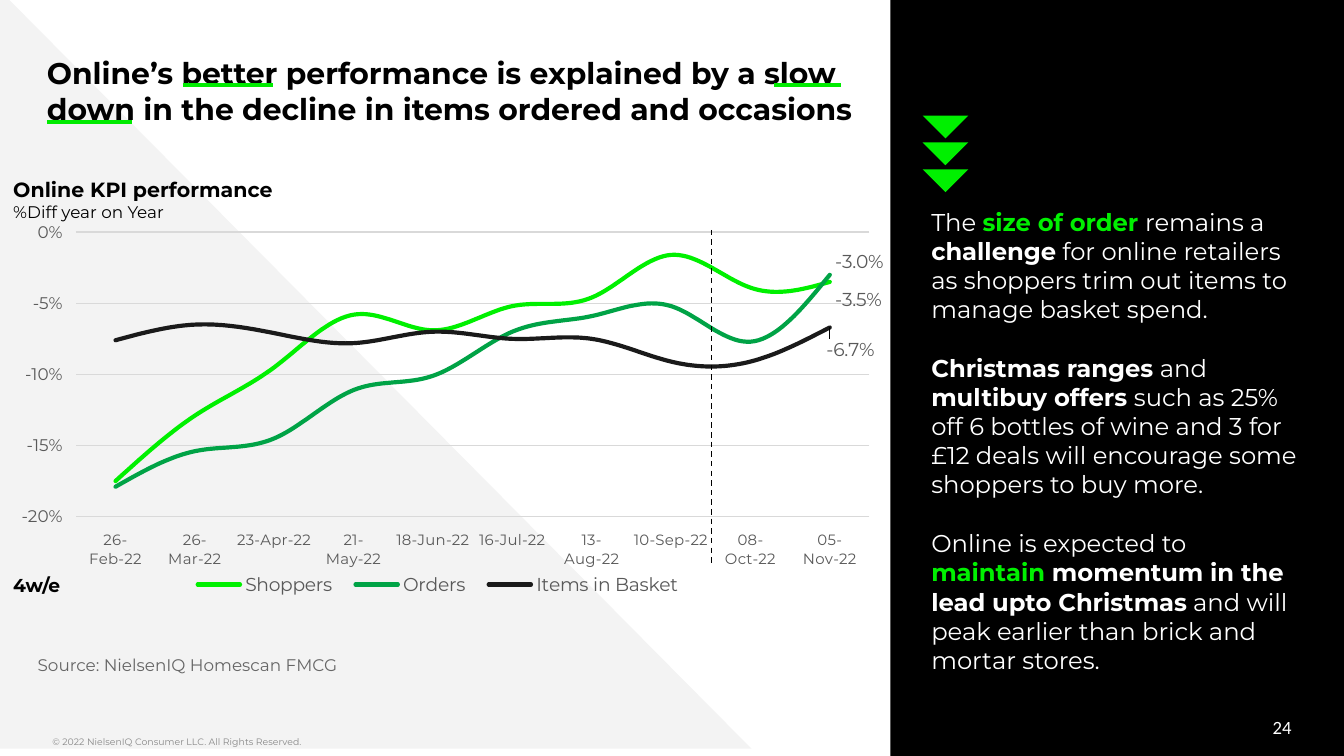
from lxml import etree
from pptx import Presentation
from pptx.chart.data import CategoryChartData
from pptx.dml.color import RGBColor
from pptx.enum.chart import (XL_CHART_TYPE, XL_LABEL_POSITION, XL_LEGEND_POSITION,
                             XL_TICK_LABEL_POSITION, XL_TICK_MARK)
from pptx.enum.dml import MSO_LINE
from pptx.enum.shapes import MSO_CONNECTOR, MSO_SHAPE
from pptx.enum.text import MSO_ANCHOR, MSO_AUTO_SIZE, PP_ALIGN
from pptx.oxml.ns import qn
from pptx.util import Inches, Pt

RECTANGLE = MSO_SHAPE.RECTANGLE
RIGHT_TRIANGLE = MSO_SHAPE.RIGHT_TRIANGLE
STRAIGHT = MSO_CONNECTOR.STRAIGHT
TOP, MIDDLE, BOTTOM = MSO_ANCHOR.TOP, MSO_ANCHOR.MIDDLE, MSO_ANCHOR.BOTTOM
LEFT, RIGHT = PP_ALIGN.LEFT, PP_ALIGN.RIGHT
DASH = MSO_LINE.DASH
NO_TICK, OUTSIDE_TICK = XL_TICK_MARK.NONE, XL_TICK_MARK.OUTSIDE

BLACK = RGBColor(0x00, 0x00, 0x00)
WHITE = RGBColor(0xFF, 0xFF, 0xFF)
PALE_GREY = RGBColor(0xF3, 0xF3, 0xF3)
GRID_GREY = RGBColor(0xD9, 0xD9, 0xD9)
LABEL_GREY = RGBColor(0x59, 0x59, 0x59)
SOURCE_GREY = RGBColor(0x66, 0x66, 0x66)
FOOTER_GREY = RGBColor(0x88, 0x88, 0x88)
BRIGHT_GREEN = RGBColor(0x00, 0xF0, 0x00)
UNDERLINE_GREEN = RGBColor(0x00, 0xEB, 0x00)
DARK_GREEN = RGBColor(0x00, 0xA3, 0x46)
CHARCOAL = RGBColor(0x1A, 0x1A, 0x1A)

FONT = "Montserrat"
SLIDE_WIDTH = Inches(10)
SLIDE_HEIGHT = SLIDE_WIDTH * 9 // 16
COLUMN = SLIDE_WIDTH / 100
ROW = SLIDE_HEIGHT / 56.25

DATES = ["26-Feb-22", "26-Mar-22", "23-Apr-22", "21-May-22", "18-Jun-22",
         "16-Jul-22", "13-Aug-22", "10-Sep-22", "08-Oct-22", "05-Nov-22"]
SERIES = [
    ("Shoppers", BRIGHT_GREEN, (0, 0.04),
     [-0.175, -0.129, -0.095, -0.058, -0.069, -0.052, -0.046, -0.016, -0.039, -0.035]),
    ("Orders", DARK_GREEN, (0, -0.03),
     [-0.179, -0.154, -0.145, -0.111, -0.101, -0.070, -0.059, -0.052, -0.077, -0.030]),
    ("Items in Basket", CHARCOAL, (-0.01, 0.05),
     [-0.076, -0.065, -0.071, -0.078, -0.070, -0.075, -0.075, -0.091, -0.091, -0.067]),
]
INSIGHTS = [
    [("The ", False, WHITE), ("size of order ", True, BRIGHT_GREEN),
     ("remains a ", False, WHITE), ("challenge", True, WHITE),
     (" for online retailers as shoppers trim out items to manage basket spend.",
      False, WHITE)],
    [("Christmas ranges ", True, WHITE), ("and ", False, WHITE),
     ("multibuy offers ", True, WHITE),
     ("such as 25% off 6 bottles of wine and 3 for £12 deals will encourage "
      "some shoppers to buy more.", False, WHITE)],
    [("Online is expected to ", False, WHITE), ("maintain", True, BRIGHT_GREEN),
     (" momentum in the lead upto Christmas", True, WHITE),
     (" and will peak earlier than brick and mortar stores.", False, WHITE)],
]


def place(left, top, width, height):
    return [round(length) for length in
            (left * COLUMN, top * ROW, width * COLUMN, height * ROW)]


def set_font(font, size, color, bold=False, name=FONT):
    font.name, font.size, font.bold = name, Pt(size), bold
    font.color.rgb = color


def add_text(slide, box, paragraphs, *, sizes, color=BLACK, bold=False, name=FONT,
             anchor=TOP, align=LEFT, side=0, inset=0.05, gap=0, wrap=True):
    frame = slide.shapes.add_textbox(*place(*box)).text_frame
    frame.word_wrap = wrap
    frame.auto_size = MSO_AUTO_SIZE.NONE if wrap else MSO_AUTO_SIZE.SHAPE_TO_FIT_TEXT
    frame.vertical_anchor = anchor
    frame.margin_left = frame.margin_right = Inches(side)
    frame.margin_top = frame.margin_bottom = Inches(inset)
    for index, content in enumerate(paragraphs):
        paragraph = frame.add_paragraph() if index else frame.paragraphs[0]
        paragraph.alignment = align
        if index and gap:
            paragraph.space_before = Pt(gap)
        runs = [(content, bold, color)] if isinstance(content, str) else content
        for text, run_bold, run_color in runs:
            run = paragraph.add_run()
            run.text = text
            set_font(run.font, sizes[index % len(sizes)], run_color, run_bold, name)


def add_block(slide, kind, box, color, rotation=0):
    shape = slide.shapes.add_shape(kind, *place(*box))
    shape.shadow.inherit = False
    shape.fill.solid()
    shape.fill.fore_color.rgb = color
    shape.line.fill.background()
    shape.rotation = rotation


def add_line(slide, start, end, color, width, dash=None):
    connector = slide.shapes.add_connector(STRAIGHT, *place(*start, *end))
    connector.line.color.rgb = color
    connector.line.width = Pt(width)
    if dash:
        connector.line.dash_style = dash
    properties = connector._element.find(qn("p:spPr"))
    etree.SubElement(properties, qn("a:effectLst"))


def make_layout(**values):
    layout = etree.Element(qn("c:layout"))
    manual = etree.SubElement(layout, qn("c:manualLayout"))
    for tag, value in values.items():
        etree.SubElement(manual, qn(f"c:{tag}")).set("val", str(value))
    return layout


def set_layout(parent, layout, before):
    for existing in parent.findall(qn("c:layout")):
        parent.remove(existing)
    parent.insert(before, layout)


def label_last_point(series, offset):
    series.data_labels.show_value = False
    label = series.points[len(DATES) - 1].data_label
    set_font(label.font, 10, LABEL_GREY)
    label.position = XL_LABEL_POSITION.RIGHT
    element = series._element.xpath("c:dLbls/c:dLbl")[0]
    set_layout(element, make_layout(x=offset[0], y=offset[1]), 1)
    number_format = etree.Element(qn("c:numFmt"), formatCode="0.0%", sourceLinked="0")
    element.insert(2, number_format)


def style_axis(axis, size, tick):
    axis.major_tick_mark = tick
    axis.minor_tick_mark = NO_TICK
    set_font(axis.tick_labels.font, size, LABEL_GREY)


def style_line(line, color, width):
    line.color.rgb = color
    line.width = Pt(width)


def add_kpi_chart(slide, box):
    data = CategoryChartData(number_format="0.0%")
    data.categories = DATES
    for name, _, _, values in SERIES:
        data.add_series(name, values)
    chart = slide.shapes.add_chart(XL_CHART_TYPE.LINE, *place(*box), data).chart
    set_font(chart.font, 10, BLACK, name="Arial")
    chart.has_title = False
    chart.plots[0].vary_by_categories = False

    dates = chart.category_axis
    style_axis(dates, 8, NO_TICK)
    dates.tick_label_position = XL_TICK_LABEL_POSITION.LOW
    style_line(dates.format.line, GRID_GREY, 0.75)

    change = chart.value_axis
    style_axis(change, 9, OUTSIDE_TICK)
    change.minimum_scale, change.maximum_scale, change.major_unit = -0.2, 0, 0.05
    change.tick_labels.number_format = "0%"
    change.tick_labels.number_format_is_linked = False
    change.format.line.fill.background()
    style_line(change.major_gridlines.format.line, GRID_GREY, 0.75)

    chart.has_legend = True
    chart.legend.position = XL_LEGEND_POSITION.BOTTOM
    chart.legend.include_in_layout = False
    set_font(chart.legend.font, 10, LABEL_GREY)
    set_layout(chart.legend._element, make_layout(
        xMode="edge", yMode="edge", x=0.19, y=0.78, w=0.59, h=0.09), 1)
    plot_area = chart._chartSpace.find(f".//{qn('c:plotArea')}")
    set_layout(plot_area, make_layout(
        layoutTarget="inner", xMode="edge", yMode="edge",
        x=0.07, y=0.02, w=0.91, h=0.65), 0)

    for series, (_, color, offset, _) in zip(chart.plots[0].series, SERIES):
        series.smooth = True
        style_line(series.format.line, color, 2.25)
        series._element.find(f".//{qn('a:ln')}").set("cap", "rnd")
        label_last_point(series, offset)


def main():
    presentation = Presentation()
    presentation.slide_width, presentation.slide_height = SLIDE_WIDTH, SLIDE_HEIGHT
    slide = presentation.slides.add_slide(presentation.slide_layouts[6])

    add_block(slide, RECTANGLE, (66.25, -0.2, 34.3, 56.6), BLACK)
    add_block(slide, RIGHT_TRIANGLE, (0, -0.7, 55.9, 56.4), PALE_GREY)
    add_text(slide, (3.9, 54.3, 55.4, 2),
             ["© 2022 NielsenIQ Consumer LLC. All Rights Reserved."],
             sizes=[5], color=FOOTER_GREY)
    add_text(slide, (73.6, 52.6, 22.5, 3), ["24"], sizes=[10], color=WHITE,
             name="Calibri", anchor=MIDDLE, align=RIGHT)
    add_text(slide, (69.3, 14.9, 27.7, 35.1), INSIGHTS, sizes=[13], gap=15.85)
    for index in range(3):
        add_block(slide, RIGHT_TRIANGLE, (69.15, 7.4 + 2 * index, 2.4, 2.4),
                  BRIGHT_GREEN, rotation=315)
    add_text(slide, (2.8, 49.2, 89.2, 2), ["Source: NielsenIQ Homescan FMCG"],
             sizes=[9], color=SOURCE_GREY, anchor=BOTTOM, inset=0.1)
    add_kpi_chart(slide, (1.1, 16.5, 64.9, 32.7))
    add_text(slide, (3.5, 3.1, 62, 4.3),
             ["Online’s better performance is explained by a slow down in the "
              "decline in items ordered and occasions"],
             sizes=[16], bold=True, inset=0.1)
    add_text(slide, (0, 42.2, 5.7, 2.7), ["4w/e"], sizes=[10], bold=True,
             side=0.1, wrap=False)
    add_text(slide, (0, 12.7, 21.5, 4.4),
             ["Online KPI performance", [("%Diff year on Year", False, BLACK)]],
             sizes=[11, 9], bold=True, side=0.1, wrap=False)
    add_line(slide, (52.94, 17.1), (52.94, 42.1), BLACK, 0.75, DASH)
    for left, right, top in [(13.6, 20.3, 6.3), (57.6, 62.6, 6.3), (3.5, 9.8, 9.1)]:
        add_line(slide, (left, top), (right, top), UNDERLINE_GREEN, 2)
    presentation.save("out.pptx")


if __name__ == "__main__":
    main()
